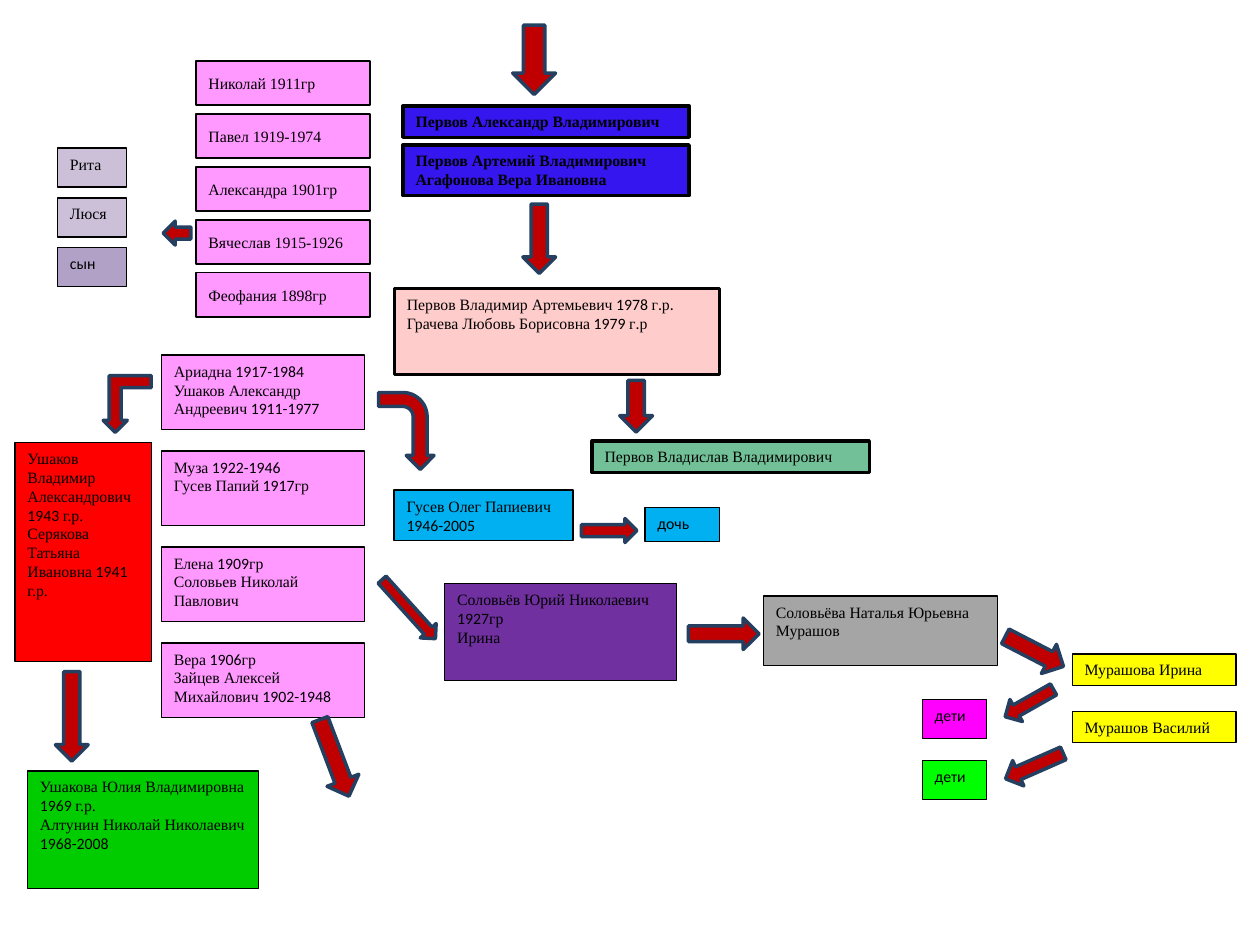
from dataclasses import dataclass, field
from typing import Any

from pptx import Presentation
from pptx.dml.color import RGBColor
from pptx.enum.shapes import MSO_SHAPE
from pptx.enum.text import MSO_ANCHOR, PP_ALIGN
from pptx.util import Pt


@dataclass(frozen=True)
class Theme:
    serif: str = "Times New Roman"
    sans: str = "Calibri"
    size: float = 9
    ink: str = "000000"
    arrow: str = "C00000"
    edge: str = "243F60"
    blue: str = "3516EE"
    rose: str = "FFCCCC"
    mint: str = "72C097"
    pink: str = "FF99FF"
    lilac: str = "CCC0D9"
    mauve: str = "B2A1C7"
    red: str = "FF0000"
    green: str = "00CC00"
    sky: str = "00B0F0"
    plum: str = "7030A0"
    gray: str = "A5A5A5"
    yellow: str = "FFFF00"
    fuchsia: str = "FF00FF"
    lime: str = "00FF00"
    thin: float = 0.75
    thick: float = 2
    frame: dict[str, Any] = field(default_factory=lambda: {
        "word_wrap": True,
        "margin_left": Pt(7.2),
        "margin_right": Pt(7.2),
        "margin_top": Pt(3.6),
        "margin_bottom": Pt(3.6),
    })


@dataclass(frozen=True)
class Box:
    left: float
    top: float
    width: float
    height: float
    fill: str
    lines: tuple[str, ...]
    edge: float = 0.75
    bold: bool = False
    middle: bool = False


@dataclass(frozen=True)
class Arrow:
    left: float
    top: float
    width: float
    height: float
    turn: float = 0
    kind: MSO_SHAPE = MSO_SHAPE.DOWN_ARROW


THEME = Theme()

ELDERS = ("Николай 1911гр", "Павел 1919-1974", "Александра 1901гр",
          "Вячеслав 1915-1926", "Феофания 1898гр")
PAIRS = (
    ("Ариадна| 1917-1984", "Ушаков Александр Андреевич| 1911-1977"),
    ("Муза| 1922-1946", "Гусев Папий| 1917|гр"),
    ("Елена| 1909|гр", "Соловьев Николай Павлович"),
    ("Вера| 1906|гр", "Зайцев Алексей Михайлович| 1902-1948"),
)
KIDS = (("Рита", THEME.lilac), ("Люся", THEME.lilac), ("|сын", THEME.mauve))

BOXES = [
    Box(230.4, 60.5, 163.4, 18, THEME.blue,
        ("Первов Александр Владимирович",), THEME.thick, True),
    Box(230.4, 82.8, 163.4, 29, THEME.blue,
        ("Первов Артемий Владимирович", "Агафонова Вера Ивановна"),
        THEME.thick, True),
    Box(225.4, 164.9, 185.8, 49, THEME.rose,
        ("Первов Владимир Артемьевич| 1978 |г|.|р|.",
         "Грачева Любовь Борисовна| 1979 |г|.|р"), THEME.thick),
    Box(338.4, 252, 158.4, 18, THEME.mint,
        ("Первов Владислав Владимирович",), THEME.thick),
    Box(8.6, 252.7, 77.8, 125.3, THEME.red,
        ("Ушаков Владимир Александрович| 1943 |г.р.",
         "Серякова Татьяна Ивановна| 1941 |г.р.")),
    Box(15.8, 440.6, 131.8, 67, THEME.green,
        ("Ушакова Юлия Владимировна| 1969 |г.р.",
         "Алтунин Николай Николаевич| 1968-2008")),
    Box(225.2, 280.1, 102.2, 28.8, THEME.sky,
        ("Гусев Олег Папиевич| 1946-2005",)),
    Box(368.6, 290.2, 42.5, 19.4, THEME.sky, ("|дочь",)),
    Box(254.2, 333.4, 132.5, 55.4, THEME.plum,
        ("Соловьёв Юрий Николаевич| 1927|гр", "Ирина")),
    Box(436.3, 340.6, 133.9, 39.6, THEME.gray,
        ("Соловьёва Наталья Юрьевна", "Мурашов")),
    Box(612.7, 373.7, 93.6, 18, THEME.yellow, ("Мурашова Ирина",)),
    Box(612.7, 406.5, 93.6, 18, THEME.yellow, ("Мурашов Василий",)),
    Box(527, 399.6, 36.7, 22.3, THEME.fuchsia, ("|дети",)),
    Box(527, 434.4, 36.7, 22.3, THEME.lime, ("|дети",)),
]
BOXES += [Box(112, 34.9 + 30.25 * row, 99.4, 25.2, THEME.pink, (name,),
              middle=True) for row, name in enumerate(ELDERS)]
BOXES += [Box(92.2, 202.9 + 54.85 * row, 115.9, 42.5, THEME.pink, pair)
          for row, pair in enumerate(PAIRS)]
BOXES += [Box(32.9, 84.6 + 28.5 * row, 39.6, 22.3, fill, (name,))
          for row, (name, fill) in enumerate(KIDS)]

ARROWS = (
    Arrow(293, 14.4, 24.5, 39.6),
    Arrow(298.8, 116.6, 18.7, 39.6),
    Arrow(354.2, 217.4, 18.7, 29.5),
    Arrow(94.3, 125.3, 13.7, 15.8, 90),
    Arrow(59, 214.6, 27.4, 32.4, 180, MSO_SHAPE.BENT_UP_ARROW),
    Arrow(31.7, 383.8, 18.7, 51.1),
    Arrow(210.2, 230.4, 43.9, 31.7, 90, MSO_SHAPE.BENT_ARROW),
    Arrow(341.3, 287.3, 13.7, 31.7, 270),
    Arrow(227.5, 325.4, 12.2, 45.4, 317.9),
    Arrow(404.6, 342, 18, 40.3, 270),
    Arrow(572.4, 362.9, 37.4, 18.7, 27.3, MSO_SHAPE.RIGHT_ARROW),
    Arrow(581, 385.9, 14.4, 31.7, 240.5, MSO_SHAPE.UP_ARROW),
    Arrow(583.2, 419.8, 15.8, 36, 66.2),
    Arrow(181.4, 409.7, 19.4, 46.8, 339.2),
)


def shape(slide: Any, kind: MSO_SHAPE, item: Box | Arrow,
          fill: str, edge: str, width: float) -> Any:
    spots = (item.left, item.top, item.width, item.height)
    form = slide.shapes.add_shape(kind, *map(Pt, spots))
    form.shadow.inherit = False
    form.fill.solid()
    form.fill.fore_color.rgb = RGBColor.from_string(fill)
    form.line.color.rgb = RGBColor.from_string(edge)
    form.line.width = Pt(width)
    return form


def write(para: Any, line: str, bold: bool) -> None:
    para.alignment = PP_ALIGN.LEFT
    for turn, part in enumerate(line.split("|")):
        if not part:
            continue
        run = para.add_run()
        run.text = part
        style = {"name": THEME.sans if turn % 2 else THEME.serif,
                 "size": Pt(THEME.size), "bold": bold}
        for key, value in style.items():
            setattr(run.font, key, value)
        run.font.color.rgb = RGBColor.from_string(THEME.ink)


def draw_box(slide: Any, box: Box) -> None:
    form = shape(slide, MSO_SHAPE.RECTANGLE, box,
                 box.fill, THEME.ink, box.edge)
    frame = form.text_frame
    anchor = MSO_ANCHOR.MIDDLE if box.middle else MSO_ANCHOR.TOP
    for key, value in {**THEME.frame, "vertical_anchor": anchor}.items():
        setattr(frame, key, value)
    for row, line in enumerate(box.lines):
        para = frame.add_paragraph() if row else frame.paragraphs[0]
        write(para, line, box.bold)


def draw_arrow(slide: Any, arrow: Arrow) -> None:
    form = shape(slide, arrow.kind, arrow,
                 THEME.arrow, THEME.edge, THEME.thick)
    form.rotation = arrow.turn


def main() -> None:
    deck = Presentation()
    deck.slide_width, deck.slide_height = Pt(720), Pt(540)
    slide = deck.slides.add_slide(deck.slide_layouts[6])
    for box in BOXES:
        draw_box(slide, box)
    for arrow in ARROWS:
        draw_arrow(slide, arrow)
    deck.save("out.pptx")


if __name__ == "__main__":
    main()
